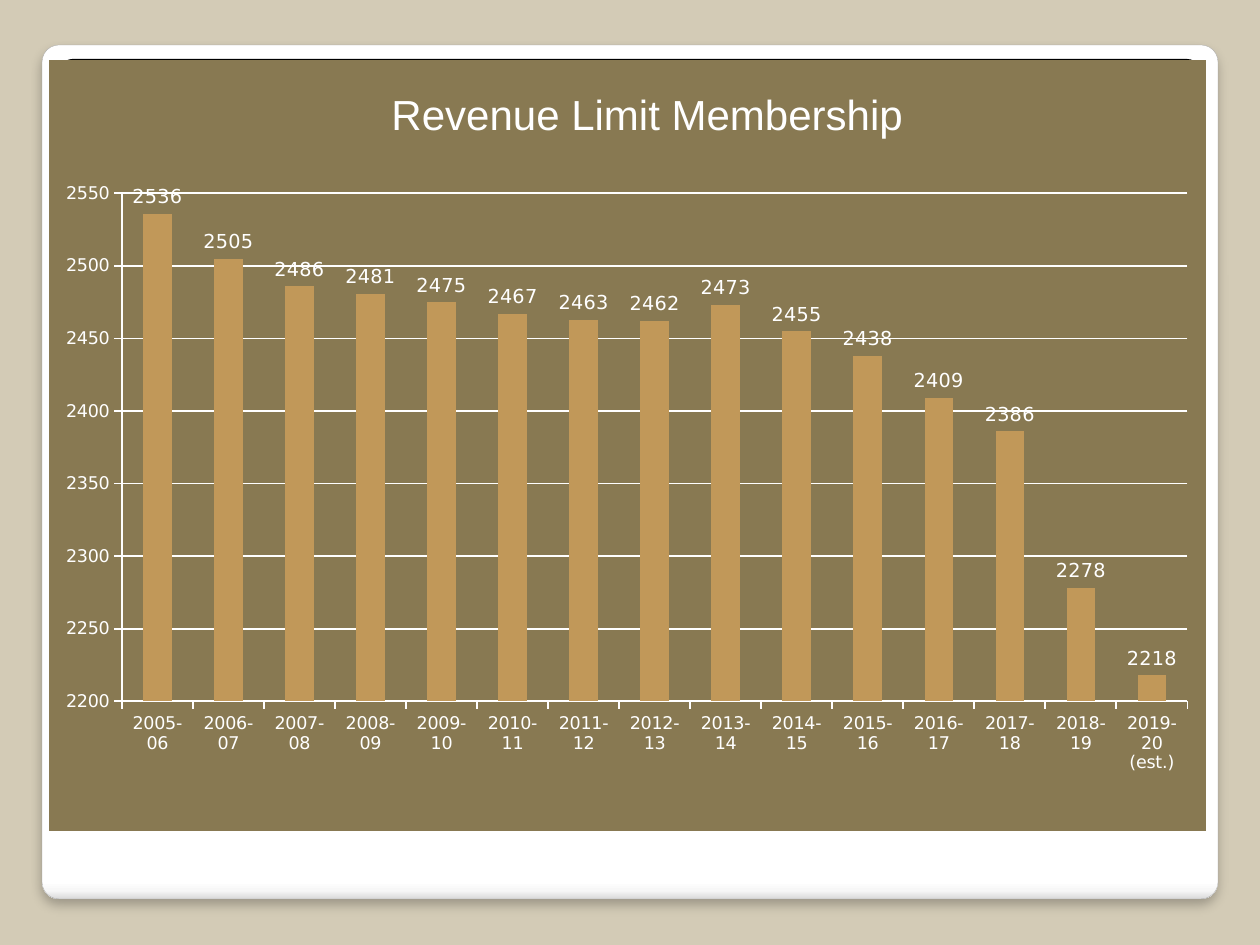
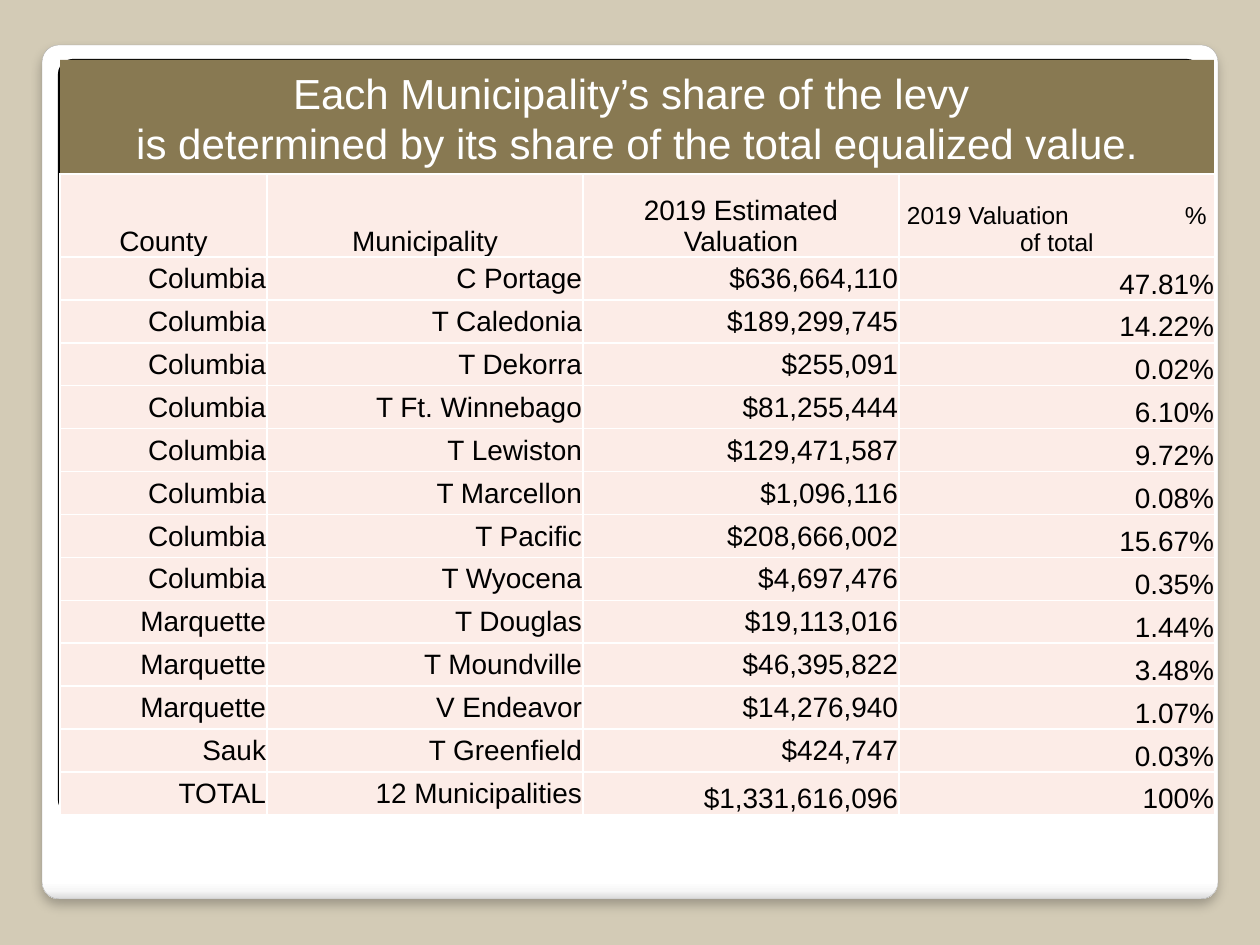
from lxml import etree
from pptx import Presentation
from pptx.chart.data import CategoryChartData
from pptx.dml.color import RGBColor
from pptx.enum.chart import XL_CHART_TYPE, XL_LABEL_POSITION, XL_TICK_MARK
from pptx.enum.shapes import MSO_SHAPE
from pptx.enum.text import MSO_ANCHOR, PP_ALIGN
from pptx.oxml import parse_xml
from pptx.oxml.ns import nsdecls, qn
from pptx.util import Emu, Pt

PX = 914400 / 126
COLORS = {"bg": "D3CBB6", "white": "FFFFFF", "black": "000000", "olive": "887952",
          "bar": "C19859", "cell": "FCECE7", "edge": "A4A4A4"}
RGB = {name: RGBColor.from_string(value) for name, value in COLORS.items()}
CENTER, RIGHT, LEFT = PP_ALIGN.CENTER, PP_ALIGN.RIGHT, PP_ALIGN.LEFT
BOTTOM, MIDDLE = MSO_ANCHOR.BOTTOM, MSO_ANCHOR.MIDDLE
ROUND, RECT = MSO_SHAPE.ROUNDED_RECTANGLE, MSO_SHAPE.RECTANGLE
OUTSIDE = XL_TICK_MARK.OUTSIDE
FONT = "Arial"
STOPS = ((0, "FFFFFF"), (98, "FFFFFF"), (99, "F7F7F7"), (100, "DADADA"))


def px(*values):
    return [Emu(round(v * PX)) for v in values]


def write(tf, lines, size, color, align):
    for i, line in enumerate(lines):
        p = tf.paragraphs[0] if i == 0 else tf.add_paragraph()
        p.alignment = align
        r = p.add_run()
        r.text = line
        for key, value in {"name": FONT, "size": Pt(size)}.items():
            setattr(r.font, key, value)
        r.font.color.rgb = RGB[color]


prs = Presentation()
prs.slide_width, prs.slide_height = px(1260, 945)
fill = prs.slide_master.background.fill
fill.solid()
fill.fore_color.rgb = RGB["bg"]
slides = [prs.slides.add_slide(prs.slide_layouts[6]) for _ in range(2)]

for slide in slides:
    for color, box in (("white", (42, 45, 1176, 854)), ("black", (58, 59, 1144, 756))):
        sp = slide.shapes.add_shape(ROUND, *px(*box))
        sp.adjustments[0] = 0.02
        sp.shadow.inherit = False
        sp.fill.solid()
        sp.fill.fore_color.rgb = RGB[color]
        sp.line.fill.background()
        if color == "white":
            sp.line.color.rgb = RGB["edge"]
            sp.line.width = Pt(0.16)
            spPr = sp.fill._xPr
            stops = "".join(f'<a:gs pos="{pos * 1000}"><a:srgbClr val="{c}"/></a:gs>' for pos, c in STOPS)
            spPr.replace(spPr.find(qn("a:solidFill")), parse_xml(
                f'<a:gradFill {nsdecls("a")}><a:gsLst>{stops}</a:gsLst>'
                '<a:lin ang="5400000" scaled="0"/></a:gradFill>'))
            spPr.find(qn("a:effectLst")).append(parse_xml(
                f'<a:outerShdw {nsdecls("a")} blurRad="76200" dist="50800" dir="5400000">'
                f'<a:srgbClr val="{COLORS["black"]}"><a:alpha val="25000"/></a:srgbClr></a:outerShdw>'))

membership = [2536, 2505, 2486, 2481, 2475, 2467, 2463, 2462, 2473, 2455, 2438, 2409, 2386, 2278, 2218]
years = [f"{y}-{(y + 1) % 100:02d}" for y in range(2005, 2020)]
years[-1] += " (est.)"
data = CategoryChartData()
data.categories = years
data.add_series("Series 1", membership)
chart = slides[0].shapes.add_chart(XL_CHART_TYPE.COLUMN_CLUSTERED, *px(49, 60, 1157, 771), data).chart
chart.has_legend = False
chart.has_title = False
for key, value in {"name": "DejaVu Sans", "size": Pt(10)}.items():
    setattr(chart.font, key, value)
chart.font.color.rgb = RGB["white"]

plot = chart.plots[0]
plot.gap_width = 150
plot.vary_by_categories = False
series_fill = plot.series[0].format.fill
series_fill.solid()
series_fill.fore_color.rgb = RGB["bar"]
plot.has_data_labels = True
labels = plot.data_labels
for key, value in {"show_value": True, "position": XL_LABEL_POSITION.OUTSIDE_END}.items():
    setattr(labels, key, value)
for key, value in {"name": "DejaVu Sans", "size": Pt(11)}.items():
    setattr(labels.font, key, value)
labels.font.color.rgb = RGB["white"]

axis = chart.value_axis
for key, value in {"minimum_scale": 2200, "maximum_scale": 2550, "major_unit": 50,
                   "has_major_gridlines": True}.items():
    setattr(axis, key, value)
for ax in (chart.category_axis, axis):
    ax.major_tick_mark = OUTSIDE
for line in (chart.category_axis.format.line, axis.format.line, axis.major_gridlines.format.line):
    line.color.rgb = RGB["white"]
    line.width = Pt(1)

space = chart._chartSpace
area = space.chart.plotArea
for old in area.findall(qn("c:layout")):
    area.remove(old)
frame = {"x": 0.063, "y": 0.173, "w": 0.921, "h": 0.659}
area.insert(0, parse_xml(
    f'<c:layout {nsdecls("c")}><c:manualLayout><c:layoutTarget val="inner"/>'
    '<c:xMode val="edge"/><c:yMode val="edge"/>'
    + "".join(f'<c:{key} val="{value}"/>' for key, value in frame.items())
    + "</c:manualLayout></c:layout>"))
olive = (f'<c:spPr {nsdecls("c", "a")}><a:solidFill><a:srgbClr val="{COLORS["olive"]}"/></a:solidFill>'
         '<a:ln><a:noFill/></a:ln></c:spPr>')
area.append(parse_xml(olive))
space.chart.addnext(parse_xml(olive))

tf = slides[0].shapes.add_textbox(*px(280, 82, 746, 63)).text_frame
tf.word_wrap = True
write(tf, ["Revenue Limit Membership "], 24, "white", CENTER)

sp = slides[1].shapes.add_shape(RECT, *px(60, 60, 1154, 115))
sp.shadow.inherit = False
sp.fill.solid()
sp.fill.fore_color.rgb = RGB["olive"]
sp.line.fill.background()
write(sp.text_frame, ["Each Municipality’s share of the levy ",
                      "is determined by its share of the total equalized value."], 24, "white", CENTER)

rows = [
    ("County", "Municipality", "2019 Estimated Valuation", "2019 Valuation\t%"),
    ("Columbia", "C Portage", "$636,664,110", "47.81%"),
    ("Columbia", "T Caledonia", "$189,299,745", "14.22%"),
    ("Columbia", "T Dekorra", "$255,091", "0.02%"),
    ("Columbia", "T Ft. Winnebago", "$81,255,444", "6.10%"),
    ("Columbia", "T Lewiston", "$129,471,587", "9.72%"),
    ("Columbia", "T Marcellon", "$1,096,116", "0.08%"),
    ("Columbia", "T Pacific", "$208,666,002", "15.67%"),
    ("Columbia", "T Wyocena", "$4,697,476", "0.35%"),
    ("Marquette", "T Douglas", "$19,113,016", "1.44%"),
    ("Marquette", "T Moundville", "$46,395,822", "3.48%"),
    ("Marquette", "V Endeavor", "$14,276,940", "1.07%"),
    ("Sauk", "T Greenfield", "$424,747", "0.03%"),
    ("TOTAL", "12 Municipalities", "$1,331,616,096", "100%"),
]
last = len(rows) - 1
table = slides[1].shapes.add_table(len(rows), 4, *px(60, 174, 1155, 641)).table
table.first_row = table.horz_banding = False
for col, width in zip(table.columns, px(207, 316, 316, 316)):
    col.width = width
for row, height in zip(table.rows, px(83, *[558 / last] * last)):
    row.height = height

for i, values in enumerate(rows):
    for j, value in enumerate(values):
        cell = table.cell(i, j)
        split = i == 0 and j == 3
        side, = px(8 if split else 1)
        low = i == 0 or j == 3 or (i == last and j == 2)
        for key, setting in {"margin_left": side, "margin_right": side, "margin_top": px(1)[0],
                             "margin_bottom": 0, "vertical_anchor": BOTTOM if low else MIDDLE}.items():
            setattr(cell, key, setting)
        cell.fill.solid()
        cell.fill.fore_color.rgb = RGB["cell"]
        lines = [value, "of total"] if split else [value]
        write(cell.text_frame, lines, 14 if split else 16, "black", RIGHT if i else CENTER)
        if split:
            p = cell.text_frame.paragraphs[0]
            p.alignment = LEFT
            tabs = etree.SubElement(p._p.get_or_add_pPr(), qn("a:tabLst"))
            etree.SubElement(tabs, qn("a:tab"), pos=str(px(278)[0]), algn="l")
        tcPr = cell._tc.get_or_add_tcPr()
        for n, edge in enumerate("LRTB"):
            tcPr.insert(n, parse_xml(
                f'<a:ln{edge} {nsdecls("a")} w="12700"><a:solidFill>'
                f'<a:srgbClr val="{COLORS["white"]}"/></a:solidFill></a:ln{edge}>'))

prs.save("out.pptx")
